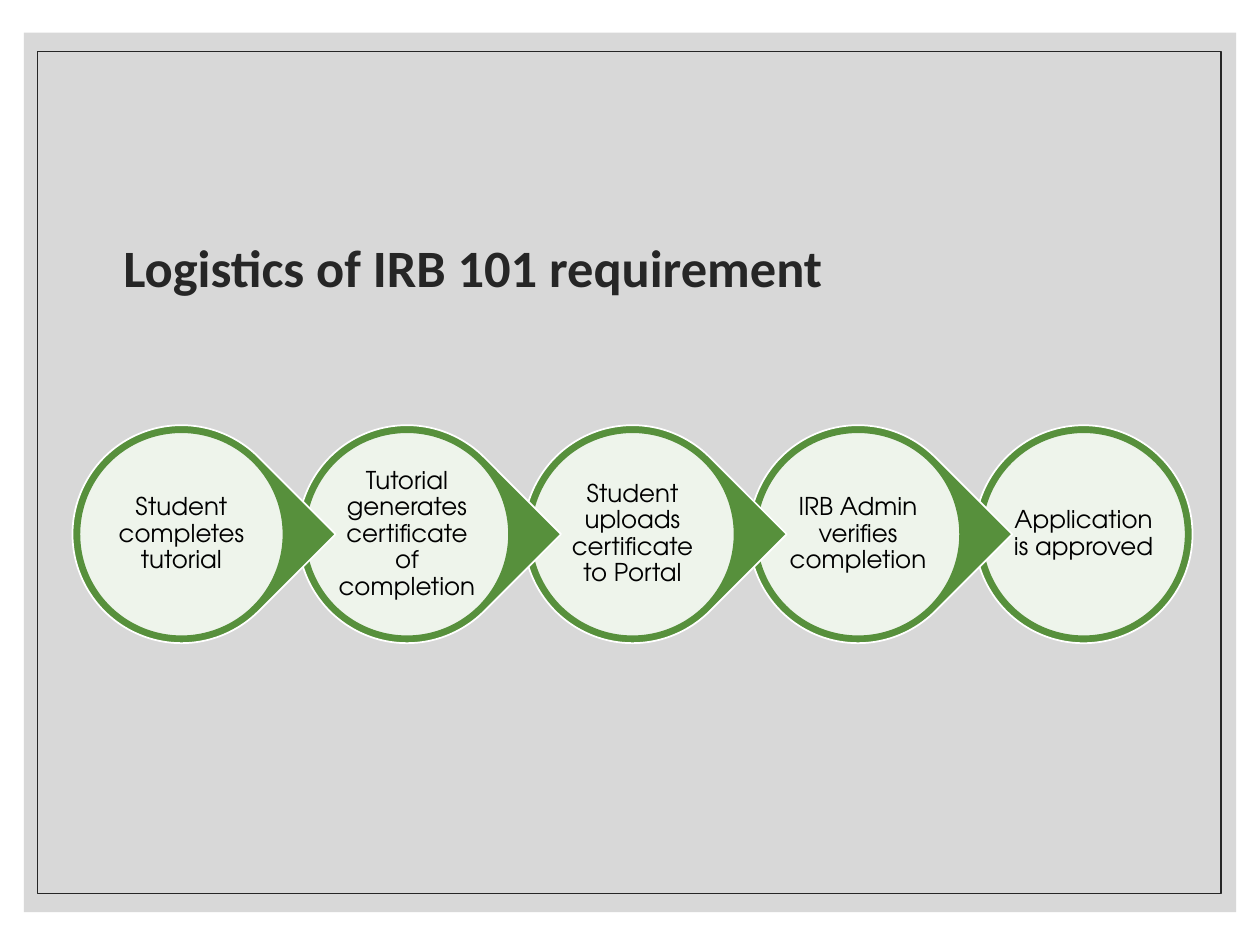
from lxml.etree import SubElement
from pptx import Presentation
from pptx.dml.color import RGBColor
from pptx.enum.shapes import MSO_SHAPE
from pptx.enum.text import MSO_ANCHOR, PP_ALIGN
from pptx.oxml.ns import qn
from pptx.util import Inches, Pt

COLORS = {"panel": "BFBFBF", "ink": "262626", "green": "57903C",
          "white": "FFFFFF", "black": "000000"}
STEPS = ["Student completes tutorial",
         "Tutorial generates certificate of completion",
         "Student uploads certificate to Portal",
         "IRB Admin verifies completion",
         "Application is approved"]

# Chain of steps, in inches
FIRST_CENTER, CENTER_Y, PITCH = 1.44, 4.24, 1.79
OUTER, INNER, LABEL = 1.73, 1.62, 1.15


def color(name):
    return RGBColor.from_string(COLORS[name])


def add_figure(slide, kind, box, fill=None, opacity=100, line=None, width=1):
    shape = slide.shapes.add_shape(kind, *map(Inches, box))
    shape.shadow.inherit = False
    if fill:
        shape.fill.solid()
        shape.fill.fore_color.rgb = color(fill)
        if opacity < 100:
            value = shape.fill._xPr.find(".//" + qn("a:srgbClr"))
            SubElement(value, qn("a:alpha"), val=str(opacity * 1000))
    else:
        shape.fill.background()
    if line:
        shape.line.color.rgb = color(line)
        shape.line.width = Pt(width)
    else:
        shape.line.fill.background()
    return shape


def add_text(slide, box, text, font, size, ink, anchor, align, insets, bold=False):
    text_frame = slide.shapes.add_textbox(*map(Inches, box)).text_frame
    text_frame.word_wrap = True
    text_frame.vertical_anchor = anchor
    text_frame.margin_left = text_frame.margin_right = Inches(insets[0])
    text_frame.margin_top = text_frame.margin_bottom = Inches(insets[1])
    text_frame.text = text
    paragraph = text_frame.paragraphs[0]
    paragraph.alignment = align
    paragraph.line_spacing = 0.9
    for run in paragraph.runs:
        run.font.name = font
        run.font.size = Pt(size)
        run.font.bold = bold
        run.font.color.rgb = color(ink)


def centered_box(center_x, side):
    return center_x - side / 2, CENTER_Y - side / 2, side, side


def add_step(slide, index, text):
    center_x = FIRST_CENTER + index * PITCH
    is_last = index == len(STEPS) - 1
    # Outer shape: a drop pointing right, or a plain disc at the end
    kind = MSO_SHAPE.OVAL if is_last else MSO_SHAPE.TEAR
    outer = add_figure(slide, kind, centered_box(center_x, OUTER),
                       fill="green", line="white")
    if not is_last:
        outer.rotation = 45
    # Pale disc and its label
    add_figure(slide, MSO_SHAPE.OVAL, centered_box(center_x, INNER),
               fill="white", opacity=90, line="green")
    add_text(slide, centered_box(center_x, LABEL), text, "TeX Gyre Adventor", 14,
             "black", MSO_ANCHOR.MIDDLE, PP_ALIGN.CENTER, (0.02, 0.02))


def main():
    presentation = Presentation()
    presentation.slide_width = Inches(10)
    presentation.slide_height = Inches(7.5)
    slide = presentation.slides.add_slide(presentation.slide_layouts[6])

    # Background panel and frame
    add_figure(slide, MSO_SHAPE.RECTANGLE, (0.19, 0.26, 9.62, 6.98),
               fill="panel", opacity=60)
    add_figure(slide, MSO_SHAPE.RECTANGLE, (0.3, 0.41, 9.39, 6.68),
               line="ink", width=0.75)

    # Title
    add_text(slide, (0.88, 1.6, 8.25, 0.82), "Logistics of IRB 101 requirement",
             "Calibri", 30, "ink", MSO_ANCHOR.BOTTOM, PP_ALIGN.LEFT,
             (0.1, 0.05), bold=True)

    # Steps from last to first, so that each tip lies over the next disc
    for index, text in reversed(list(enumerate(STEPS))):
        add_step(slide, index, text)

    presentation.save("out.pptx")


if __name__ == "__main__":
    main()
